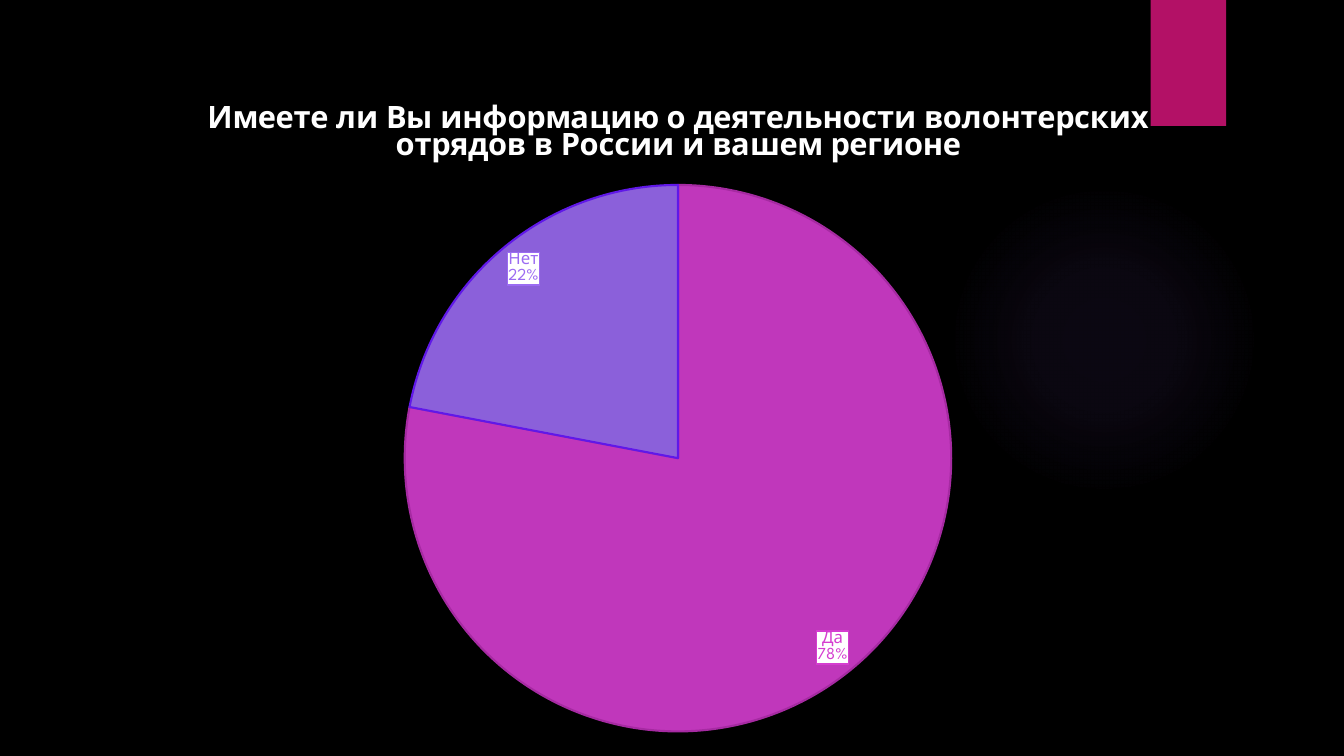
from lxml import etree
from pptx import Presentation
from pptx import util as u
from pptx.chart.data import CategoryChartData
from pptx.dml.color import RGBColor
from pptx.enum import chart as ch, shapes
from pptx.oxml import parse_xml
from pptx.oxml.ns import nsdecls, qn

# Content
QUESTION = "Имеете ли Вы информацию о деятельности волонтерских отрядов в России и вашем регионе"
ANSWERS = [  # answer, percent, fill, outline
    ("Да", 78, "D53DD0", "A62AA2"),
    ("Нет", 22, "9B6BF2", "6018E8"),
]
FONT = "League Spartan"
GLOW_STOPS = [(0, 7), (36, 6), (69, 0)]  # position, opacity in percent
CHART_BOX = (16.56, 56.88, 936, 475.92)
PIE_CENTER, PIE_RADIUS = (484.3, 327.3), 195.2


def rgb(value):
    return RGBColor.from_string(value)


def place(kind, *box):
    shape = slide.shapes.add_shape(kind, *map(u.Pt, box))
    shape.shadow.inherit = False
    shape.line.fill.background()
    return shape


def style(font, size, color, bold=False):
    font.name, font.size, font.bold = FONT, u.Pt(size), bold
    font.color.rgb = rgb(color)


deck = Presentation()
deck.slide_width, deck.slide_height = u.Pt(960), u.Pt(540)
slide = deck.slides.add_slide(deck.slide_layouts[6])
slide.background.fill.solid()
slide.background.fill.fore_color.rgb = rgb("000000")

# Soft round glow
glow = place(shapes.MSO_SHAPE.OVAL, 677.52, 131.76, 221.76, 221.76)
stops = "".join(
    f'<a:gs pos="{pos * 1000}"><a:srgbClr val="9B6BF2">'
    f'<a:alpha val="{opacity * 1000}"/></a:srgbClr></a:gs>'
    for pos, opacity in GLOW_STOPS)
glow_fill = parse_xml(
    f'<a:gradFill {nsdecls("a")} rotWithShape="1"><a:gsLst>{stops}</a:gsLst>'
    '<a:path path="circle"><a:fillToRect l="50000" t="50000" r="50000" b="50000"/>'
    '</a:path></a:gradFill>')
glow._element.spPr.find(qn("a:prstGeom")).addnext(glow_fill)

# Corner ribbon
ribbon = place(shapes.MSO_SHAPE.RECTANGLE, 821.88, 0, 54, 90)
ribbon.fill.solid()
ribbon.fill.fore_color.rgb = rgb("B31166")

# Pie chart
survey = CategoryChartData()
survey.categories = [answer[0] for answer in ANSWERS]
survey.add_series("Series 1", [answer[1] for answer in ANSWERS])
pie = slide.shapes.add_chart(
    ch.XL_CHART_TYPE.PIE, *map(u.Pt, CHART_BOX), survey).chart
style(pie.font, 10, "FFFFFF")
pie.has_legend = False
pie.has_title = True
heading = pie.chart_title.text_frame.paragraphs[0]
question = heading.add_run()
question.text = QUESTION
style(question.font, 22, "FFFFFF", bold=True)
pie.chart_title.include_in_layout = False

# Pie circle within the chart frame
left, top, width, height = CHART_BOX
layout = {
    "x": (PIE_CENTER[0] - PIE_RADIUS - left) / width,
    "y": (PIE_CENTER[1] - PIE_RADIUS - top) / height,
    "w": 2 * PIE_RADIUS / width,
    "h": 2 * PIE_RADIUS / height,
}
plot_area = pie._chartSpace.chart.plotArea
for old in plot_area.findall(qn("c:layout")):
    plot_area.remove(old)
plot_area.insert(0, parse_xml(
    f'<c:layout {nsdecls("c")}><c:manualLayout><c:layoutTarget val="inner"/>'
    '<c:xMode val="edge"/><c:yMode val="edge"/>'
    + "".join(f'<c:{key} val="{part:.4f}"/>' for key, part in layout.items())
    + '</c:manualLayout></c:layout>'))

# Labels show the answer and its percentage
plot = pie.plots[0]
plot.vary_by_categories = True
labels = plot.series[0].data_labels
labels.show_value = False
labels.show_category_name = labels.show_percentage = True
labels.position = ch.XL_LABEL_POSITION.INSIDE_END

# Slices and their labels
for index, (_, _, fill, outline) in enumerate(ANSWERS):
    point = plot.series[0].points[index]
    point.format.fill.solid()
    point.format.fill.fore_color.rgb = rgb(fill)
    color = point.format.fill._xPr.find(".//" + qn("a:srgbClr"))
    etree.SubElement(color, qn("a:alpha")).set("val", "90000")
    point.format.line.color.rgb = rgb(outline)
    point.format.line.width = u.Pt(1.5)

    label = point.data_label
    style(label.font, 12, fill)
    label.position = ch.XL_LABEL_POSITION.INSIDE_END
    entry = label._dLbl
    for flag, shown in (("showVal", "0"), ("showCatName", "1"), ("showPercent", "1")):
        entry.find(qn(f"c:{flag}")).set("val", shown)
    etree.SubElement(entry, qn("c:separator")).text = "\n"
    entry.find(qn("c:txPr")).addprevious(parse_xml(
        f'<c:spPr {nsdecls("c", "a")}><a:solidFill><a:srgbClr val="FFFFFF"/></a:solidFill>'
        f'<a:ln w="12700"><a:solidFill><a:srgbClr val="{fill}"/></a:solidFill></a:ln></c:spPr>'))

deck.save("out.pptx")
